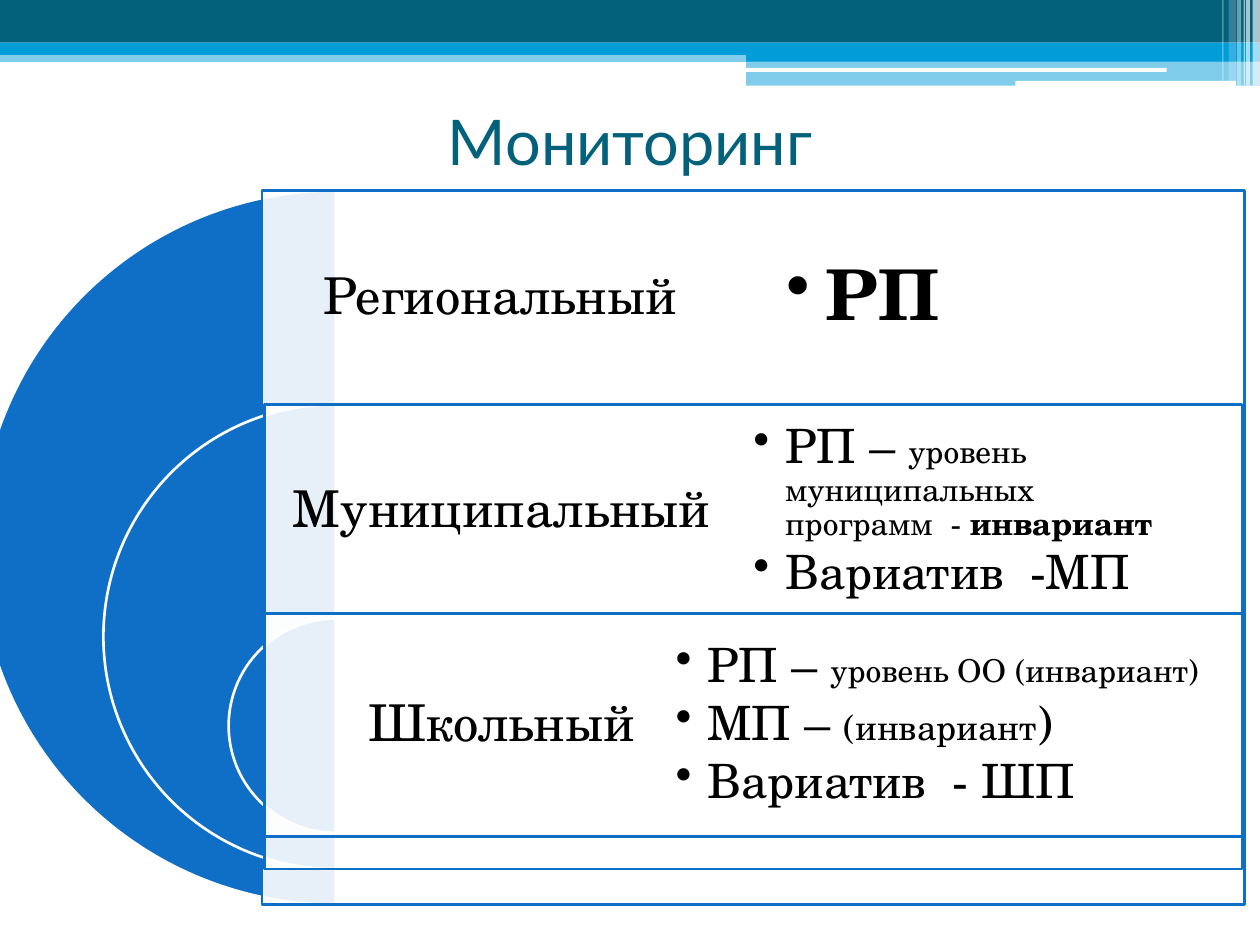
from dataclasses import dataclass

from lxml.etree import SubElement
from pptx import Presentation
from pptx.dml.color import RGBColor
from pptx.enum.shapes import MSO_SHAPE as Shape
from pptx.enum.text import MSO_ANCHOR as Anchor, PP_ALIGN as Align
from pptx.oxml.ns import qn
from pptx.util import Cm, Pt


@dataclass(frozen=True)
class Theme:
    teal: str = "04617B"
    sky: str = "009DD9"
    blue: str = "0F6FC6"
    white: str = "FFFFFF"
    black: str = "000000"
    title_font: str = "Lato"
    body_font: str = "TeX Gyre Schola"
    title: int = 36
    label: int = 29
    accent: int = 40
    item: int = 27
    medium: int = 20
    small: int = 18
    outline: float = 1.5


THEME = Theme()

# Header: left, top, width, height (cm), colour, opacity in percent
BANDS = [
    (0, 1.02, 25.4, 0.23, THEME.sky, 50),
    (0, 0, 25.4, 0.86, THEME.teal, 100),
    (0, 0.86, 25.4, 0.25, THEME.sky, 100),
    (15.04, 0.99, 10.36, 0.25, THEME.sky, 100),
    (15.04, 1.22, 10.36, 0.51, THEME.sky, 50),
]
WHITE_BARS = [(15.01, 1.37, 8.51, 0.08), (20.47, 1.63, 4.45, 0.1)]
# Stripes: left, width, height, opacity
STRIPES = [
    (25.25, 0.15, 1.73, 65), (25.12, 0.08, 1.73, 65), (25.07, 0.03, 1.73, 60),
    (24.94, 0.08, 1.73, 40), (24.77, 0.15, 1.63, 20), (24.64, 0.03, 1.63, 30),
]

# Levels: all pies share one vertical axis
PIE_AXIS = 6.77
ROW = 4.32
LEVELS = [
    # name, pie (top, diameter), panel, label height
    ("Региональный ", (3.84, 14.4), (5.28, 3.84, 19.81, 14.4), ROW),
    ("Муниципальный ", (8.15, 9.37), (5.33, 8.15, 19.71, 9.37), ROW),
    ("Школьный ", (12.47, ROW), (5.33, 12.37, 19.71, 4.5), 4.5),
]

# Details: place, hanging indent, paragraphs of (text, size, bold) spans
DETAILS = [
    ((15.16, 3.84, 8.41, ROW), 0.79, [[("РП", THEME.accent, True)]]),
    ((14.5, 8.15, 9.75, ROW), 0.64, [
        [("РП – ", THEME.item, False),
         ("уровень муниципальных программ  - ", THEME.small, False),
         ("инвариант", THEME.small, True)],
        [("Вариатив  -МП", THEME.item, False)],
    ]),
    ((12.93, 11.91, 12.9, 5.41), 0.64, [
        [("РП – ", THEME.item, False),
         ("уровень ОО (инвариант)", THEME.small, False)],
        [("МП – ", THEME.item, False), ("(инвариант", THEME.medium, False),
         (")", THEME.item, False)],
        [("Вариатив  - ШП", THEME.item, False)],
    ]),
]


def add_figure(page, kind, place, color, opacity=100, line=None):
    figure = page.shapes.add_shape(kind, *map(Cm, place))
    figure.shadow.inherit = False
    figure.fill.solid()
    figure.fill.fore_color.rgb = RGBColor.from_string(color)
    if opacity < 100:
        tint = figure.fill._xPr.find(qn("a:solidFill"))[0]
        SubElement(tint, qn("a:alpha")).set("val", str(opacity * 1000))
    if line:
        figure.line.color.rgb = RGBColor.from_string(line)
        figure.line.width = Pt(THEME.outline)
    else:
        figure.line.fill.background()
    return figure


def add_bullet(para, hang):
    props = para._p.get_or_add_pPr()
    props.set("marL", str(Cm(hang)))
    props.set("indent", str(-Cm(hang)))
    SubElement(props, qn("a:buChar")).set("char", "•")


def add_text(page, place, paragraphs, font=THEME.body_font, color=THEME.black,
             align=Align.LEFT, inset=0.25, spacing=0.9, after=0, hang=None):
    box = page.shapes.add_textbox(*map(Cm, place))
    frame = box.text_frame
    frame.word_wrap = True
    frame.vertical_anchor = Anchor.MIDDLE
    frame.margin_left = frame.margin_right = Cm(inset)
    frame.margin_top = frame.margin_bottom = Cm(inset)
    for index, spans in enumerate(paragraphs):
        para = frame.add_paragraph() if index else frame.paragraphs[0]
        para.alignment = align
        para.line_spacing = spacing
        para.space_after = Pt(after)
        if hang:
            para.level = 1
            add_bullet(para, hang)
        for text, size, bold in spans:
            span = para.add_run()
            span.text = text
            span.font.name = font
            span.font.size = Pt(size)
            span.font.bold = bold
            span.font.color.rgb = RGBColor.from_string(color)
    return box


def add_header(page):
    for *place, color, opacity in BANDS:
        add_figure(page, Shape.RECTANGLE, place, color, opacity)
    for place in WHITE_BARS:
        add_figure(page, Shape.ROUNDED_RECTANGLE, place, THEME.white)
    for left, width, height, opacity in STRIPES:
        add_figure(page, Shape.RECTANGLE, (left, 0, width, height),
                   THEME.white, opacity)


def add_level(page, name, pie_place, panel, label_height):
    pie_top, diameter = pie_place
    pie = add_figure(page, Shape.PIE,
                     (PIE_AXIS - diameter / 2, pie_top, diameter, diameter),
                     THEME.blue, line=THEME.white)
    # Left half: from 90 to 270 degrees
    pie.adjustments[0], pie.adjustments[1] = 54, 162
    add_figure(page, Shape.RECTANGLE, panel, THEME.white, 90, THEME.blue)
    left, top, width, _ = panel
    add_text(page, (left, top, width / 2, label_height),
             [[(name, THEME.label, False)]],
             align=Align.CENTER, inset=0.3)


def main():
    deck = Presentation()
    deck.slide_width, deck.slide_height = Cm(25.4), Cm(19.05)
    page = deck.slides.add_slide(deck.slide_layouts[6])

    # Header and title
    add_header(page)
    add_text(page, (1.27, 1.93, 22.86, 1.8),
             [[("Мониторинг", THEME.title, False)]], font=THEME.title_font,
             color=THEME.teal, align=Align.CENTER, inset=0.13, spacing=1.0)

    # Nested levels, then their details on top
    for level in LEVELS:
        add_level(page, *level)
    for place, hang, paragraphs in DETAILS:
        add_text(page, place, paragraphs, inset=0.69, after=4, hang=hang)

    deck.save("out.pptx")


if __name__ == "__main__":
    main()
